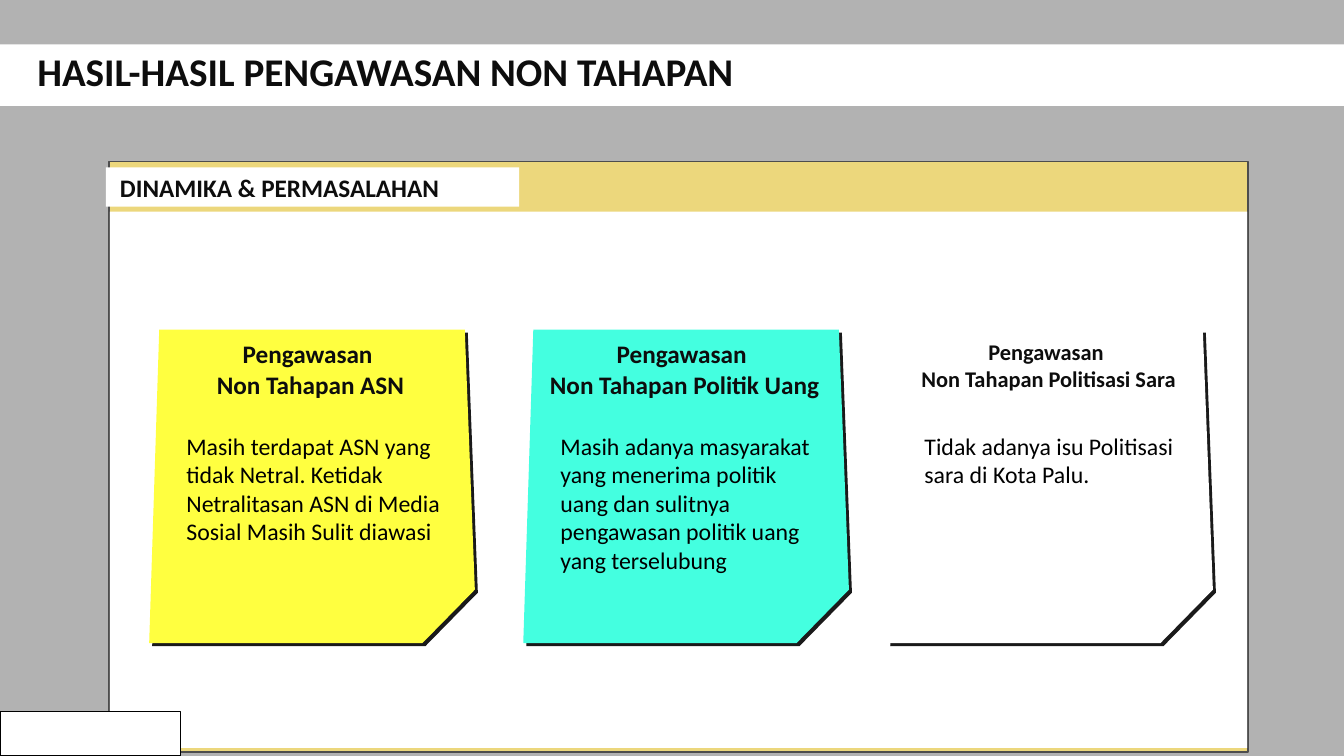
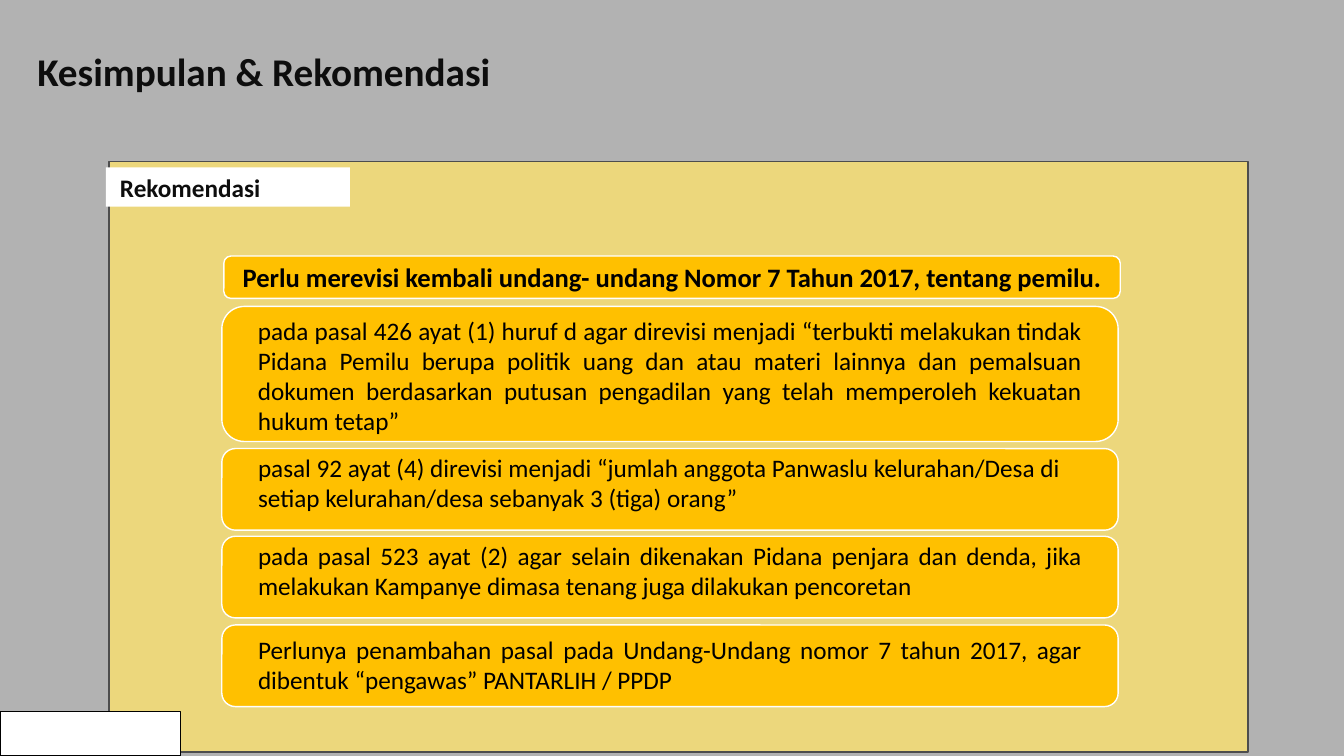
from pptx import Presentation
from pptx.dml.color import RGBColor
from pptx.enum.shapes import MSO_SHAPE
from pptx.enum.text import MSO_ANCHOR, MSO_AUTO_SIZE, PP_ALIGN
from pptx.util import Inches, Pt

FONT = "Calibri"
COLORS = {
    "background": "B2B2B2",
    "panel": "ECD77C",
    "panel_line": "4D4D4D",
    "white": "FFFFFF",
    "black": "000000",
    "heading": "0D0D0D",
    "note_edge": "1A1A1A",
    "yellow": "FFFF40",
    "turquoise": "44FFE0",
    "amber": "FFC000",
}


def style_shape(shape, fill, line=None):
    shape.shadow.inherit = False
    shape.fill.solid()
    shape.fill.fore_color.rgb = RGBColor.from_string(COLORS[fill])
    if line:
        shape.line.color.rgb = RGBColor.from_string(COLORS[line])
        shape.line.width = Pt(1)
    else:
        shape.line.fill.background()
    return shape


def write_text(shape, lines, size, color="black", bold=False,
               align=PP_ALIGN.LEFT, anchor=MSO_ANCHOR.TOP):
    frame = shape.text_frame
    frame.word_wrap = True
    frame.auto_size = MSO_AUTO_SIZE.NONE
    frame.vertical_anchor = anchor
    for index, line in enumerate(lines):
        paragraph = frame.add_paragraph() if index else frame.paragraphs[0]
        paragraph.alignment = align
        run = paragraph.add_run()
        run.text = line
        run.font.name = FONT
        run.font.size = Pt(size)
        run.font.bold = bold
        run.font.color.rgb = RGBColor.from_string(COLORS[color])
    return frame


presentation = Presentation()
presentation.slide_width = Inches(13.33)
presentation.slide_height = Inches(7.5)
master_fill = presentation.slide_master.background.fill
master_fill.solid()
master_fill.fore_color.rgb = RGBColor.from_string(COLORS["background"])

# Shared frame: title band, panel, label, corner box
slides = []
for title_text, label_text, label_width, has_white_areas in [
    ("HASIL-HASIL PENGAWASAN NON TAHAPAN", "DINAMIKA & PERMASALAHAN", 4.1, True),
    ("Kesimpulan & Rekomendasi", "Rekomendasi", 2.42, False),
]:
    slide = presentation.slides.add_slide(presentation.slide_layouts[5])
    slides.append(slide)

    title = slide.shapes.title
    title.left, title.top = Inches(0), Inches(0.44)
    title.width, title.height = Inches(13.33), Inches(0.61)
    frame = write_text(title, [title_text], 28, "heading", bold=True)
    frame.margin_left, frame.margin_top = Inches(0.37), Inches(0.03)

    panel = slide.shapes.add_shape(
        MSO_SHAPE.RECTANGLE, Inches(1.08), Inches(1.6), Inches(11.3), Inches(5.86))
    style_shape(panel, "panel", "panel_line")
    if has_white_areas:
        style_shape(title, "white")
        content_area = slide.shapes.add_shape(
            MSO_SHAPE.RECTANGLE, Inches(1.09), Inches(2.1), Inches(11.28), Inches(5.32))
        style_shape(content_area, "white")

    label = slide.shapes.add_shape(
        MSO_SHAPE.RECTANGLE, Inches(1.05), Inches(1.66), Inches(label_width), Inches(0.39))
    style_shape(label, "white")
    frame = write_text(label, [label_text], 18, "heading", bold=True, anchor=MSO_ANCHOR.MIDDLE)
    frame.margin_left = Inches(0.14)
    frame.margin_top = frame.margin_bottom = 0

    corner_box = slide.shapes.add_shape(
        MSO_SHAPE.RECTANGLE, 0, Inches(7.06), Inches(1.79), Inches(0.44))
    style_shape(corner_box, "white", "black")

findings_slide, recommendations_slide = slides

# Findings: three notes with a cut corner and a dark edge
NOTE_OUTLINE = [(0.04, 3.27), (3.07, 3.27), (3.17, 5.85), (2.65, 6.38), (-0.06, 6.38)]
EDGE = 0.03
notes = [
    (1.54, "yellow", 18, "Non Tahapan ASN",
     "Masih terdapat ASN yang tidak Netral. Ketidak Netralitasan ASN di Media "
     "Sosial Masih Sulit diawasi"),
    (5.25, "turquoise", 18, "Non Tahapan Politik Uang",
     "Masih adanya masyarakat yang menerima politik uang dan sulitnya "
     "pengawasan politik uang yang terselubung"),
    (8.86, "white", 16, "Non Tahapan Politisasi Sara",
     "Tidak adanya isu Politisasi sara di Kota Palu."),
]
for left, color, heading_size, heading, body in notes:
    for offset, fill in [(EDGE, "note_edge"), (0, color)]:
        points = [(Inches(left + x + offset), Inches(y + offset)) for x, y in NOTE_OUTLINE]
        builder = findings_slide.shapes.build_freeform(*points[0])
        builder.add_line_segments(points[1:], close=True)
        style_shape(builder.convert_to_shape(), fill)

    heading_box = findings_slide.shapes.add_textbox(
        Inches(left - 0.08), Inches(3.31), Inches(3.24), Inches(0.71))
    write_text(heading_box, ["Pengawasan ", heading], heading_size, "heading",
               bold=True, align=PP_ALIGN.CENTER)
    body_box = findings_slide.shapes.add_textbox(
        Inches(left + 0.21), Inches(4.23), Inches(2.78), Inches(1.53))
    write_text(body_box, [body], 17)

# Recommendations: headline bar and four proposals
headline = recommendations_slide.shapes.add_shape(
    MSO_SHAPE.ROUNDED_RECTANGLE, Inches(2.22), Inches(2.54), Inches(8.89), Inches(0.42))
style_shape(headline, "amber", "white")
frame = write_text(
    headline, ["Perlu merevisi kembali undang- undang Nomor 7 Tahun 2017, tentang pemilu."],
    19, bold=True, align=PP_ALIGN.CENTER, anchor=MSO_ANCHOR.MIDDLE)
frame.margin_left = frame.margin_right = frame.margin_top = frame.margin_bottom = 0

proposals = [
    (3.04, 1.34, 0.02, PP_ALIGN.JUSTIFY,
     "pada pasal 426 ayat (1) huruf d agar direvisi menjadi “terbukti melakukan tindak "
     "Pidana Pemilu berupa politik uang dan atau materi lainnya dan pemalsuan dokumen "
     "berdasarkan putusan pengadilan yang telah memperoleh kekuatan hukum tetap”"),
    (4.45, 0.81, 0, PP_ALIGN.LEFT,
     "pasal 92 ayat (4) direvisi menjadi “jumlah anggota Panwaslu kelurahan/Desa di "
     "setiap kelurahan/desa sebanyak 3 (tiga) orang”"),
    (5.32, 0.81, 0, PP_ALIGN.JUSTIFY,
     "pada pasal 523 ayat (2) agar selain dikenakan Pidana penjara dan denda, jika "
     "melakukan Kampanye dimasa tenang juga dilakukan pencoretan"),
    (6.2, 0.81, 0.05, PP_ALIGN.JUSTIFY,
     "Perlunya penambahan pasal pada Undang-Undang nomor 7 tahun 2017, agar dibentuk "
     "“pengawas” PANTARLIH / PPDP"),
]
for top, height, margin_top, align, text in proposals:
    proposal = recommendations_slide.shapes.add_shape(
        MSO_SHAPE.ROUNDED_RECTANGLE, Inches(2.2), Inches(top), Inches(8.89), Inches(height))
    style_shape(proposal, "amber", "white")
    frame = write_text(proposal, [text], 18, align=align)
    # The rounded corners already inset the text by 5 % of the height
    frame.margin_left = frame.margin_right = Inches(0.36 - 0.05 * height)
    frame.margin_top, frame.margin_bottom = Inches(margin_top), 0

presentation.save("out.pptx")
